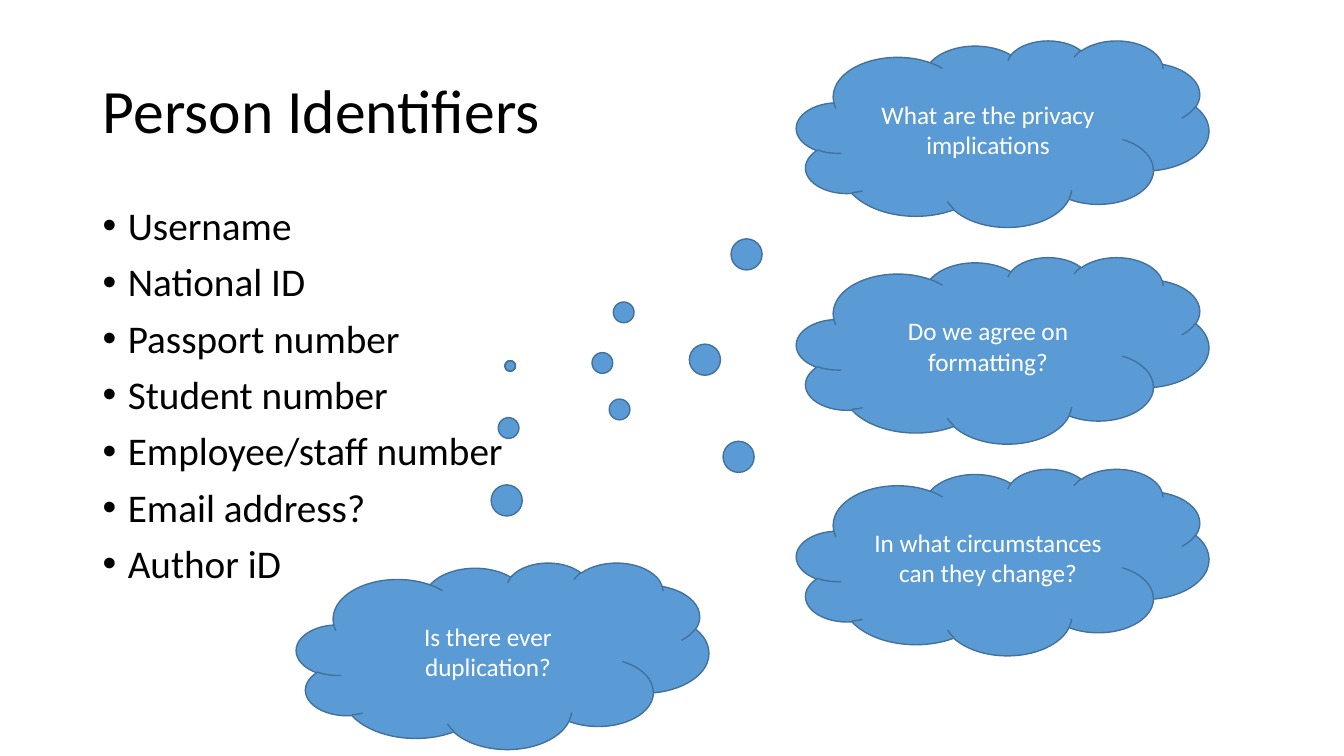
from lxml import etree
from pptx import Presentation, util as u
from pptx.dml.color import RGBColor
from pptx.enum import shapes, text
from pptx.oxml import ns

BLACK = RGBColor(0x00, 0x00, 0x00)
WHITE = RGBColor(0xFF, 0xFF, 0xFF)
CLOUD_BLUE = RGBColor(0x5B, 0x9B, 0xD5)
OUTLINE_BLUE = RGBColor(0x42, 0x71, 0x9B)

CLOUD_WIDTH, CLOUD_HEIGHT = 4.09, 1.85
THOUGHT_SOURCE = (5.06, 3.63)
IDENTIFIERS = [
    "Username",
    "National ID",
    "Passport number",
    "Student number",
    "Employee/staff number",
    "Email address?",
    "Author iD",
]
QUESTIONS = [
    ("Do we agree on formatting?", 7.9, 2.55),
    ("In what circumstances can they change?", 7.9, 4.65),
    ("What are the privacy implications", 7.9, 0.4),
    ("Is there ever duplication?", 2.94, 5.58),
]


def write_text(paragraph, content, size=18, color=BLACK, font="Calibri",
               align=text.PP_ALIGN.LEFT, line_spacing=1.0, space_before=0):
    paragraph.alignment = align
    paragraph.line_spacing = line_spacing
    paragraph.space_before = u.Pt(space_before)
    run = paragraph.add_run()
    run.text = content
    run.font.name = font
    run.font.size = u.Pt(size)
    run.font.color.rgb = color


class SlideBuilder:
    def __init__(self, presentation):
        self.slide = presentation.slides.add_slide(presentation.slide_layouts[5])

    def prepare_frame(self, shape, anchor):
        frame = shape.text_frame
        frame.word_wrap = True
        frame.auto_size = text.MSO_AUTO_SIZE.NONE
        frame.vertical_anchor = anchor
        frame.margin_left = frame.margin_right = u.Inches(0.1)
        frame.margin_top = frame.margin_bottom = u.Inches(0.05)
        return frame

    def title(self, content, left, top, width, height):
        shape = self.slide.shapes.title
        shape.left, shape.top = u.Inches(left), u.Inches(top)
        shape.width, shape.height = u.Inches(width), u.Inches(height)
        frame = self.prepare_frame(shape, text.MSO_ANCHOR.MIDDLE)
        write_text(frame.paragraphs[0], content, size=44, line_spacing=0.9)

    def bullets(self, items, left, top, width, height):
        shape = self.slide.shapes.add_textbox(
            u.Inches(left), u.Inches(top), u.Inches(width), u.Inches(height))
        frame = self.prepare_frame(shape, text.MSO_ANCHOR.TOP)
        for index, item in enumerate(items):
            paragraph = frame.add_paragraph() if index else frame.paragraphs[0]
            write_text(paragraph, item, size=28, line_spacing=0.9,
                       space_before=10 if index else 0)
            properties = paragraph._p.get_or_add_pPr()
            properties.set("marL", str(u.Inches(0.25)))
            properties.set("indent", str(-u.Inches(0.25)))
            etree.SubElement(properties, ns.qn("a:buFont"), typeface="Arial")
            etree.SubElement(properties, ns.qn("a:buChar"), char="•")

    def thought_cloud(self, content, left, top):
        shape = self.slide.shapes.add_shape(
            shapes.MSO_SHAPE.CLOUD_CALLOUT, u.Inches(left), u.Inches(top),
            u.Inches(CLOUD_WIDTH), u.Inches(CLOUD_HEIGHT))
        source_x, source_y = THOUGHT_SOURCE
        shape.adjustments[0] = (source_x - left) / CLOUD_WIDTH - 0.5
        shape.adjustments[1] = (source_y - top) / CLOUD_HEIGHT - 0.5
        shape.shadow.inherit = False
        shape.fill.solid()
        shape.fill.fore_color.rgb = CLOUD_BLUE
        shape.line.color.rgb = OUTLINE_BLUE
        shape.line.width = u.Pt(1)
        frame = self.prepare_frame(shape, text.MSO_ANCHOR.MIDDLE)
        write_text(frame.paragraphs[0], content, color=WHITE,
                   align=text.PP_ALIGN.CENTER)


def main():
    presentation = Presentation()
    presentation.slide_width = u.Inches(13.33)
    presentation.slide_height = u.Inches(7.5)
    builder = SlideBuilder(presentation)
    builder.title("Person Identifiers", 0.92, 0.4, 11.5, 1.45)
    builder.bullets(IDENTIFIERS, 0.92, 2, 11.5, 4.76)
    for question, left, top in QUESTIONS:
        builder.thought_cloud(question, left, top)
    presentation.save("out.pptx")


if __name__ == "__main__":
    main()
